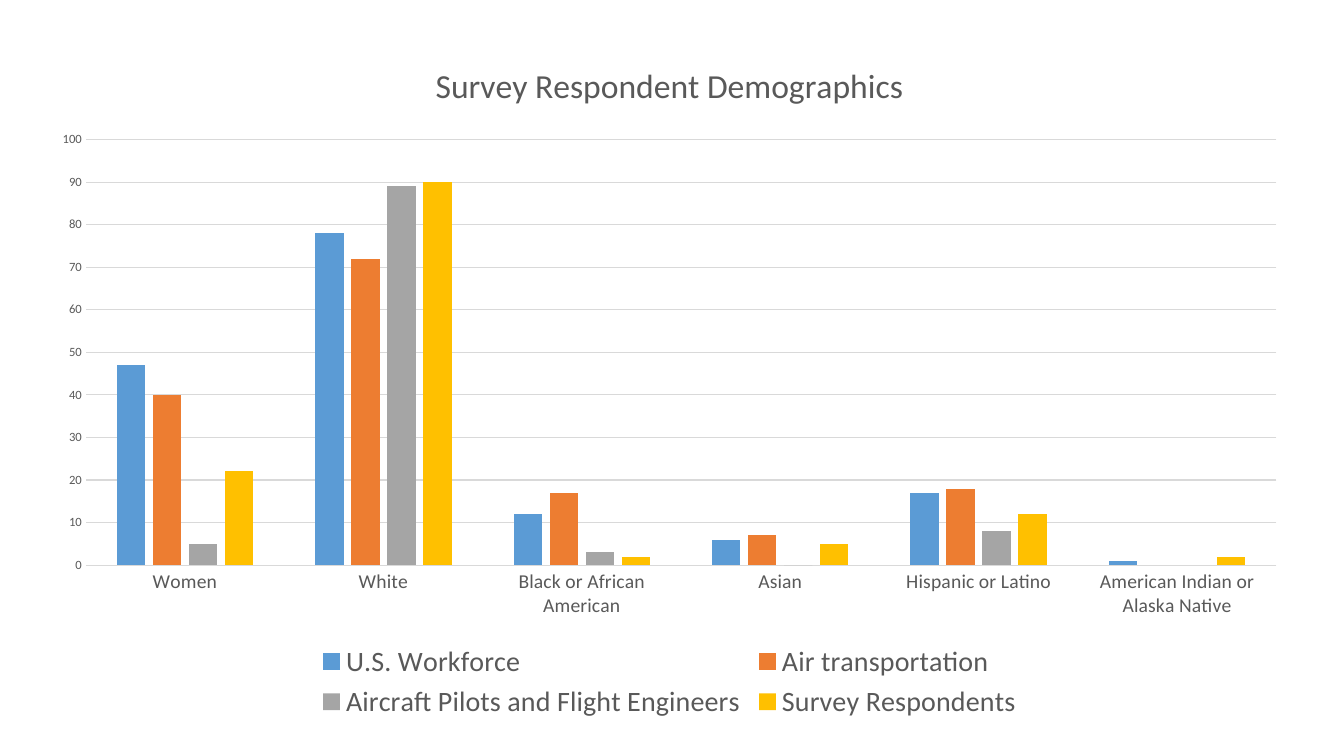
"""Build a slide with a clustered column chart of survey demographics."""
from pptx import Presentation
from pptx import util as u
from pptx.chart.data import CategoryChartData
from pptx.dml.color import RGBColor
from pptx.enum import chart as charts

COLORS = {
    "text": "595959",
    "grid": "D9D9D9",
    "U.S. Workforce": "5B9BD5",
    "Air transportation": "ED7D31",
    "Aircraft Pilots and Flight Engineers": "A5A5A5",
    "Survey Respondents": "FFC000",
}
GROUPS = ["Women", "White", "Black or African American", "Asian",
          "Hispanic or Latino", "American Indian or Alaska Native"]
SHARES = {
    "U.S. Workforce": [47, 78, 12, 6, 17, 1],
    "Air transportation": [40, 72, 17, 7, 18, None],
    "Aircraft Pilots and Flight Engineers": [5, 89, 3, 0, 8, None],
    "Survey Respondents": [22, 90, 2, 5, 12, 2],
}


def color(name):
    """Return the named colour."""
    return RGBColor.from_string(COLORS[name])


def format_font(font, size, name="Calibri", shade="text", bold=False):
    """Set typeface, size, colour and weight of a font."""
    font.name = name
    font.size = u.Pt(size)
    font.bold = bold
    font.color.rgb = color(shade)


def write_text(frame, content, **style):
    """Put one formatted paragraph into a text frame."""
    frame.text = content
    format_font(frame.paragraphs[0].runs[0].font, **style)


def format_line(line):
    """Give a line the thin grey look of the grid."""
    line.color.rgb = color("grid")
    line.width = u.Pt(0.75)


def format_axes(chart):
    """Style the category axis, the value axis and the gridlines."""
    for axis, size in ((chart.category_axis, 14), (chart.value_axis, 9)):
        axis.major_tick_mark = charts.XL_TICK_MARK.NONE
        axis.minor_tick_mark = charts.XL_TICK_MARK.NONE
        format_font(axis.tick_labels.font, size)
    format_line(chart.category_axis.format.line)
    value_axis = chart.value_axis
    value_axis.minimum_scale, value_axis.maximum_scale = 0, 100
    value_axis.major_unit = 10
    value_axis.format.line.fill.background()
    format_line(value_axis.major_gridlines.format.line)


def add_demographics_chart(slide, left, top, width, height):
    """Place the column chart with its title and legend in the given box."""
    data = CategoryChartData()
    data.categories = GROUPS
    for name, values in SHARES.items():
        data.add_series(name, values)
    box = [u.Inches(length) for length in (left, top, width, height)]
    chart = slide.shapes.add_chart(
        charts.XL_CHART_TYPE.COLUMN_CLUSTERED, *box, data).chart
    format_font(chart.font, 10)
    write_text(chart.chart_title.text_frame,
               "Survey Respondent Demographics", size=24)
    chart.chart_title.include_in_layout = False
    format_axes(chart)

    plot = chart.plots[0]
    plot.gap_width, plot.overlap = 219, -27
    plot.vary_by_categories = False
    for series in plot.series:
        series.invert_if_negative = False
        series.format.fill.solid()
        series.format.fill.fore_color.rgb = color(series.name)

    chart.has_legend = True
    chart.legend.position = charts.XL_LEGEND_POSITION.BOTTOM
    chart.legend.include_in_layout = False
    format_font(chart.legend.font, 20)


def main():
    """Create and save the presentation."""
    presentation = Presentation()
    presentation.slide_width = u.Inches(13.33)
    presentation.slide_height = u.Inches(7.5)
    slide = presentation.slides.add_slide(presentation.slide_layouts[6])
    add_demographics_chart(slide, 0.37, 0.38, 12.54, 6.81)
    presentation.save("out.pptx")


if __name__ == "__main__":
    main()
